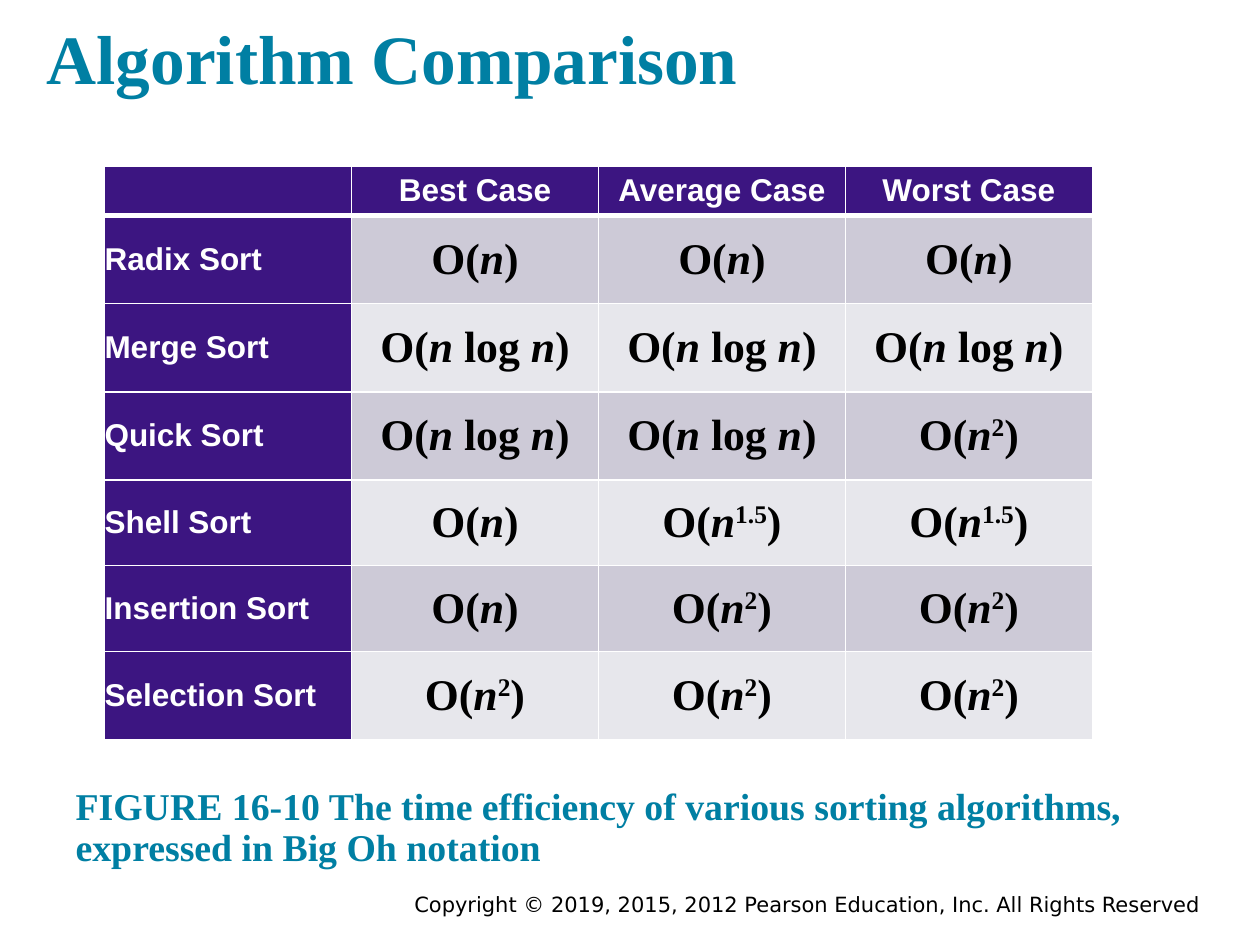
"""Build the Algorithm Comparison slide with its table of sorting efficiencies."""
from typing import NamedTuple

from lxml import etree
from pptx import Presentation
from pptx import util as u
from pptx.dml.color import RGBColor
from pptx.enum import text
from pptx.oxml.ns import qn

TEAL = RGBColor(0x00, 0x7F, 0xA3)
PURPLE = RGBColor(0x3C, 0x15, 0x81)
LILAC = RGBColor(0xCD, 0xCA, 0xD7)
PALE = RGBColor(0xE7, 0xE7, 0xEC)
WHITE = RGBColor(0xFF, 0xFF, 0xFF)
BLACK = RGBColor(0x00, 0x00, 0x00)
SERIF, SANS, FOOTER = "Times New Roman", "Arial", "DejaVu Sans"
WIDTH, HEIGHT = u.Inches(10), u.Inches(7.5)
COLUMN = 0.196
ROW_HEIGHTS = (0.39, 0.7, 0.7, 0.7, 0.68, 0.68, 0.7)


class Run(NamedTuple):
    text: str
    italic: bool = False
    raised: bool = False


class Box(NamedTuple):
    left: float
    top: float
    width: float
    height: float


class Sort(NamedTuple):
    name: str
    cases: tuple


def power(exponent: str) -> tuple:
    return Run("O("), Run("n", italic=True), Run(exponent, raised=True), Run(")")


LINEAR = (Run("O("), Run("n", italic=True), Run(")"))
LOG = (Run("O("), Run("n ", italic=True), Run("log"), Run(" n", italic=True), Run(")"))
SQUARE, SHELL = power("2"), power("1.5")
HEADINGS = ("", "Best Case", "Average Case", "Worst Case")
SORTS = (
    Sort("Radix Sort", (LINEAR, LINEAR, LINEAR)),
    Sort("Merge Sort", (LOG, LOG, LOG)),
    Sort("Quick Sort", (LOG, LOG, SQUARE)),
    Sort("Shell Sort", (LINEAR, SHELL, SHELL)),
    Sort("Insertion Sort", (LINEAR, SQUARE, SQUARE)),
    Sort("Selection Sort", (SQUARE, SQUARE, SQUARE)),
)


def place(box: Box) -> tuple:
    """Turn shares of the slide into lengths."""
    return (int(box.left * WIDTH), int(box.top * HEIGHT),
            int(box.width * WIDTH), int(box.height * HEIGHT))


def write(tf, runs, *, size, font, color, bold=True, align=text.PP_ALIGN.LEFT,
          anchor=None, inset=0.0, spacing=1.0) -> None:
    """Fill a text frame with one formatted paragraph."""
    tf.word_wrap = True
    tf.margin_left = tf.margin_right = tf.margin_top = tf.margin_bottom = u.Inches(inset)
    if anchor is not None:
        tf.auto_size = text.MSO_AUTO_SIZE.NONE
        tf.vertical_anchor = anchor
    p = tf.paragraphs[0]
    p.alignment, p.line_spacing, p.space_before = align, spacing, u.Pt(0)
    for part in [Run(runs)] if isinstance(runs, str) else runs:
        r = p.add_run()
        r.text = part.text
        r.font.name, r.font.size, r.font.bold = font, u.Pt(size), bold
        r.font.italic, r.font.color.rgb = part.italic, color
        if part.raised:
            r.font._element.set("baseline", "32000")


def write_placeholder(sp, box: Box, words: str, **style) -> None:
    """Move a placeholder and give it teal text without a bullet."""
    sp.left, sp.top, sp.width, sp.height = place(box)
    pPr = sp.text_frame.paragraphs[0]._p.get_or_add_pPr()
    pPr.set("marL", "0")
    pPr.set("indent", "0")
    etree.SubElement(pPr, qn("a:buNone"))
    write(sp.text_frame, words, font=SERIF, color=TEAL, inset=0.1,
          anchor=text.MSO_ANCHOR.BOTTOM, **style)


def set_borders(cell, row: int, column: int) -> None:
    """Rule a cell in white, with a heavy line under the headings."""
    tcPr = cell._tc.get_or_add_tcPr()
    for index, side in enumerate("LRTB"):
        heavy = (row == 0 and side == "B") or (row == 1 and column and side == "T")
        ln = etree.Element(qn(f"a:ln{side}"), w=str(u.Pt(3 if heavy else 1)))
        fill = etree.SubElement(ln, qn("a:solidFill"))
        etree.SubElement(fill, qn("a:srgbClr"), val=str(WHITE))
        tcPr.insert(index, ln)


def fill_cell(cell, row: int, column: int, content) -> None:
    """Format a heading or an efficiency by its place in the table."""
    heading = row == 0 or column == 0
    cell.fill.solid()
    cell.fill.fore_color.rgb = PURPLE if heading else LILAC if row % 2 else PALE
    cell.vertical_anchor = text.MSO_ANCHOR.MIDDLE
    cell.margin_left = cell.margin_right = cell.margin_top = cell.margin_bottom = 0
    set_borders(cell, row, column)
    if content:
        write(cell.text_frame, content, size=18 if heading else 25,
              font=SANS if heading else SERIF, color=WHITE if heading else BLACK,
              align=text.PP_ALIGN.CENTER if column else text.PP_ALIGN.LEFT)


def add_comparison(s) -> None:
    """Add the table of sorts and their cases."""
    rows = [HEADINGS] + [(sort.name, *sort.cases) for sort in SORTS]
    box = Box(0.083, 0.176, COLUMN * len(HEADINGS), sum(ROW_HEIGHTS) / 7.5)
    table = s.shapes.add_table(len(rows), len(HEADINGS), *place(box)).table
    for column in table.columns:
        column.width = int(COLUMN * WIDTH)
    for i, (height, row) in enumerate(zip(ROW_HEIGHTS, rows)):
        table.rows[i].height = u.Inches(height)
        for j, content in enumerate(row):
            fill_cell(table.cell(i, j), i, j, content)


def main() -> None:
    prs = Presentation()
    prs.slide_width, prs.slide_height = WIDTH, HEIGHT
    s = prs.slides.add_slide(prs.slide_layouts[1])
    write_placeholder(s.shapes.title, Box(0.027, 0, 0.931, 0.117),
                      "Algorithm Comparison", size=39.6)
    write_placeholder(s.placeholders[1], Box(0.05, 0.817, 0.9, 0.117),
                      "FIGURE 16-10 The time efficiency of various sorting algorithms, "
                      "expressed in Big Oh notation", size=21.6, spacing=0.9)
    add_comparison(s)
    sp = s.shapes.add_textbox(*place(Box(0.175, 0.937, 0.783, 0.041)))
    write(sp.text_frame,
          "Copyright © 2019, 2015, 2012 Pearson Education, Inc. All Rights Reserved",
          size=12, font=FOOTER, color=BLACK, bold=False,
          align=text.PP_ALIGN.RIGHT, inset=0.05)
    prs.save("out.pptx")


if __name__ == "__main__":
    main()
